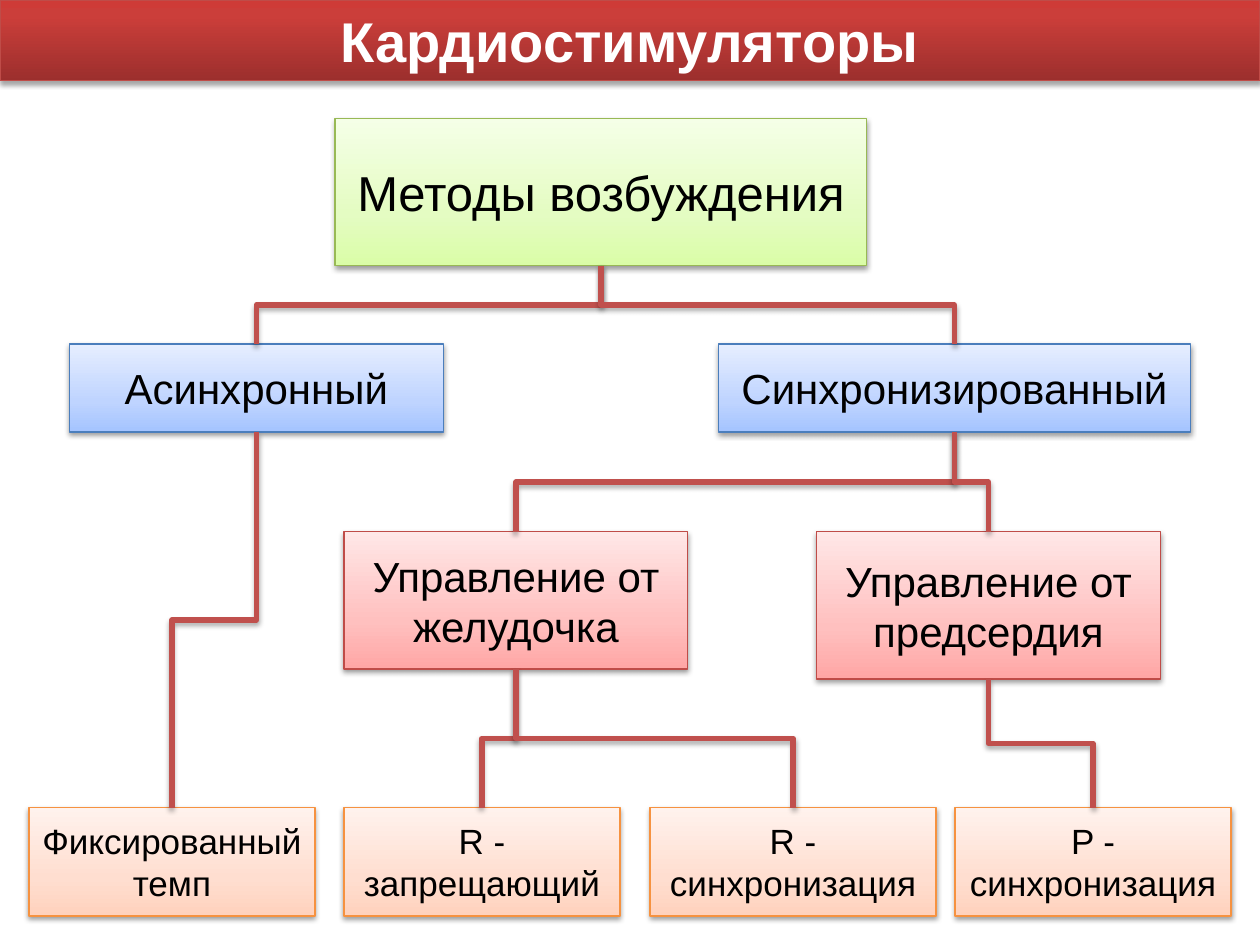
import copy
from dataclasses import dataclass

import pptx
import pptx.dml.color
import pptx.enum.shapes
import pptx.enum.text
import pptx.oxml
import pptx.oxml.ns
import pptx.util
from pptx.util import Inches

qn = pptx.oxml.ns.qn


@dataclass(frozen=True)
class Look:
    stops: tuple[tuple[float, str], ...]
    edge: str
    size: int
    ink: str = "000000"
    bold: bool = False
    shade: int = 38
    drop: float = 1.6


@dataclass(frozen=True)
class Box:
    text: str
    left: float
    top: float
    width: float
    height: float
    look: Look


def blend(low: str, mid: str, high: str, part: float = 0.35) -> tuple:
    return (0, low), (part, mid), (1, high)


GREEN = Look(blend("DAFDA7", "E4FCC2", "F5FFE7"), "98B955", 28)
BLUE = Look(blend("A4C4FF", "BFD4FF", "E6EEFF"), "4B7EBC", 24)
PINK = Look(blend("FFA6A5", "FFC0BF", "FFE7E7"), "BF4C48", 24)
PEACH = Look(blend("FFD2BD", "FFDED0", "FFF2ED"), "F69240", 20)
RED = Look(blend("9C2F2D", "CB3E3A", "CE3B37", 0.8), "BF4C48", 32,
           "FFFFFF", True, 35, 1.8)

ROW2, ROW3, ROW4 = 2.73, 4.22, 6.41
BOXES = {
    "root": Box("Методы возбуждения", 2.66, 0.94, 4.22, 1.17, GREEN),
    "sync": Box("Синхронизированный", 5.7, ROW2, 3.75, 0.7, BLUE),
    "async": Box("Асинхронный", 0.55, ROW2, 2.97, 0.7, BLUE),
    "vent": Box("Управление от желудочка", 2.73, ROW3, 2.73, 1.09, PINK),
    "atri": Box("Управление от предсердия", 6.48, ROW3, 2.73, 1.17, PINK),
    "pwave": Box("P - синхронизация", 7.58, ROW4, 2.19, 0.86, PEACH),
    "rwave": Box("R - синхронизация", 5.16, ROW4, 2.27, 0.86, PEACH),
    "block": Box("R - запрещающий", 2.73, ROW4, 2.19, 0.86, PEACH),
    "fixed": Box("Фиксированный темп", 0.23, ROW4, 2.27, 0.86, PEACH),
}
LINKS = [
    ("root", "async"), ("root", "sync"), ("sync", "vent"), ("sync", "atri"),
    ("vent", "block"), ("vent", "rwave"), ("atri", "pwave"), ("async", "fixed"),
]
TITLE = Box("Кардиостимуляторы", 0, 0, 10, 0.64, RED)


def color(code: str) -> pptx.dml.color.RGBColor:
    return pptx.dml.color.RGBColor.from_string(code)


def shadow(item, shade: int, drop: float) -> None:
    props = item._element.spPr
    for old in props.findall(qn("a:effectLst")):
        props.remove(old)
    blur, dist = pptx.util.Pt(3.1), pptx.util.Pt(drop)
    props.append(pptx.oxml.parse_xml(
        f'<a:effectLst {pptx.oxml.ns.nsdecls("a")}>'
        f'<a:outerShdw blurRad="{blur}" dist="{dist}" dir="5400000" rotWithShape="0">'
        f'<a:srgbClr val="000000"><a:alpha val="{shade * 1000}"/></a:srgbClr>'
        '</a:outerShdw></a:effectLst>'))


def paint(shape, look: Look) -> None:
    fill = shape.fill
    fill.gradient()
    fill.gradient_angle = 90
    group = shape._element.spPr.find(".//" + qn("a:gsLst"))
    group.append(copy.deepcopy(group[0]))
    for stop, (place, code) in zip(fill.gradient_stops, look.stops):
        stop.position = place
        stop.color.rgb = color(code)
    shape.line.color.rgb = color(look.edge)
    shape.line.width = pptx.util.Pt(0.75)
    shadow(shape, look.shade, look.drop)


def draw(slide, box: Box):
    shape = slide.shapes.add_shape(
        pptx.enum.shapes.MSO_SHAPE.RECTANGLE, Inches(box.left),
        Inches(box.top), Inches(box.width), Inches(box.height))
    paint(shape, box.look)
    frame = shape.text_frame
    frame.text = box.text
    frame.word_wrap = True
    frame.vertical_anchor = pptx.enum.text.MSO_ANCHOR.MIDDLE
    para = frame.paragraphs[0]
    para.alignment = pptx.enum.text.PP_ALIGN.CENTER
    font = para.runs[0].font
    font.name = "Arial"
    font.size = pptx.util.Pt(box.look.size)
    font.bold = box.look.bold
    font.color.rgb = color(box.look.ink)
    return shape


def link(slide, start, end) -> None:
    x1, y1 = start.left + start.width // 2, start.top + start.height
    x2, y2 = end.left + end.width // 2, end.top
    line = slide.shapes.add_connector(
        pptx.enum.shapes.MSO_CONNECTOR.ELBOW, x1, y1, x2, y2)
    line.begin_connect(start, 2)
    line.end_connect(end, 0)
    line.width, line.height = y2 - y1, abs(x2 - x1)
    line.left = (x1 + x2 - line.width) // 2
    line.top = (y1 + y2 - line.height) // 2
    frame = line._element.spPr.find(qn("a:xfrm"))
    right = x2 > x1
    frame.set("rot", "16200000" if right else "5400000")
    frame.set("flipH", "1" if right else "0")
    frame.set("flipV", "0")
    line.line.color.rgb = color("C0504D")
    line.line.width = pptx.util.Pt(3)
    shadow(line, 35, 1.8)


def main() -> None:
    deck = pptx.Presentation()
    deck.slide_width, deck.slide_height = Inches(10), Inches(7.5)
    slide = deck.slides.add_slide(deck.slide_layouts[6])
    nodes = {name: draw(slide, box) for name, box in BOXES.items()}
    for start, end in LINKS:
        link(slide, nodes[start], nodes[end])
    title = draw(slide, TITLE)
    title.text_frame.vertical_anchor = pptx.enum.text.MSO_ANCHOR.TOP
    title.text_frame.auto_size = pptx.enum.text.MSO_AUTO_SIZE.SHAPE_TO_FIT_TEXT
    deck.save("out.pptx")


if __name__ == "__main__":
    main()
